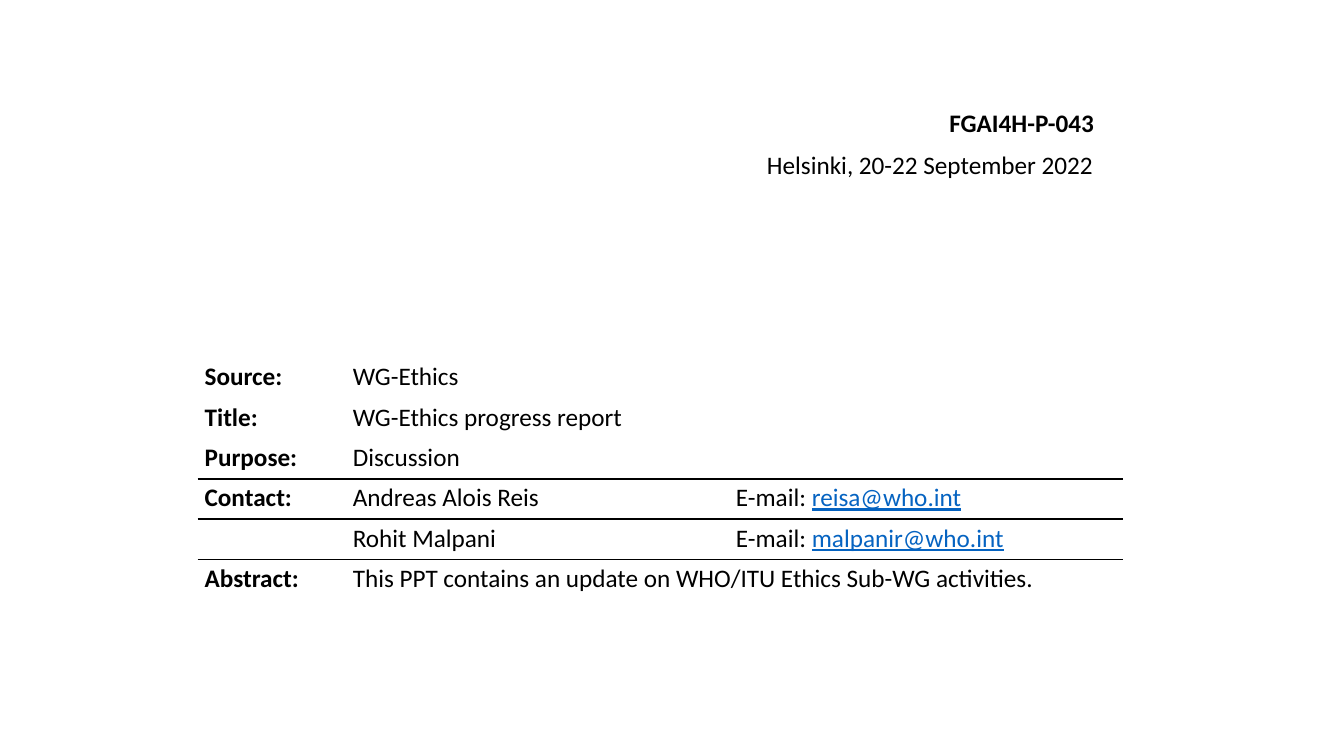
from lxml.etree import SubElement
from pptx import Presentation
from pptx.dml.color import RGBColor
from pptx.enum.text import MSO_AUTO_SIZE, PP_ALIGN
from pptx.oxml.ns import qn
from pptx.util import Pt

PX = 9144  # EMU: 100 px to the inch
BLACK = RGBColor(0x00, 0x00, 0x00)
LINK_BLUE = RGBColor(0x05, 0x63, 0xC1)
FONT = "Calibri"
TEXT_SIZE = Pt(18)
RULE_WIDTH = Pt(1.5)

HEADINGS = [  # text, bold, box
    ("FGAI4H-P-043", True, (929, 102, 166, 40)),
    ("Helsinki, 20-22 September 2022", False, (747, 143, 347, 40)),
]
TABLE_BOX = (196, 355)
COLUMN_WIDTHS = [147, 380, 391]
ROW_HEIGHT = 40
ROWS = [  # label, detail, e-mail address
    ("Source:", "WG-Ethics", None),
    ("Title:", "WG-Ethics progress report", None),
    ("Purpose:", "Discussion", None),
    ("Contact:", "Andreas Alois Reis", "reisa@who.int"),
    ("", "Rohit Malpani", "malpanir@who.int"),
    ("Abstract:", "This PPT contains an update on WHO/ITU Ethics Sub-WG activities.", None),
]
RULED_EDGES = {3, 4, 5}  # row edges, counted from the top of the table


def add_run(paragraph, text, bold=False, color=BLACK, underline=False):
    run = paragraph.add_run()
    run.text = text
    font = run.font
    font.name, font.size = FONT, TEXT_SIZE
    font.bold, font.underline = bold, underline
    font.color.rgb = color


def add_heading(slide, text, bold, box):
    shape = slide.shapes.add_textbox(*(length * PX for length in box))
    frame = shape.text_frame
    frame.word_wrap = False
    frame.auto_size = MSO_AUTO_SIZE.SHAPE_TO_FIT_TEXT
    paragraph = frame.paragraphs[0]
    paragraph.alignment = PP_ALIGN.RIGHT
    add_run(paragraph, text, bold)


def set_border(cell, side, visible):
    line = SubElement(cell._tc.get_or_add_tcPr(), qn(f"a:ln{side}"), w=str(RULE_WIDTH))
    if visible:
        fill = SubElement(line, qn("a:solidFill"))
        SubElement(fill, qn("a:srgbClr"), val=str(BLACK))
    else:
        SubElement(line, qn("a:noFill"))


def format_cell(cell, row_index):
    cell.margin_left = cell.margin_right = 7 * PX
    cell.margin_top = cell.margin_bottom = 4 * PX
    set_border(cell, "L", False)
    set_border(cell, "R", False)
    set_border(cell, "T", row_index in RULED_EDGES)
    set_border(cell, "B", row_index + 1 in RULED_EDGES)
    cell.fill.background()


def add_document_table(slide, left, top):
    table = slide.shapes.add_table(
        len(ROWS), len(COLUMN_WIDTHS), left * PX, top * PX,
        sum(COLUMN_WIDTHS) * PX, len(ROWS) * ROW_HEIGHT * PX).table
    table.first_row = table.horz_banding = False
    for column, width in zip(table.columns, COLUMN_WIDTHS):
        column.width = width * PX

    for row_index, (label, detail, email) in enumerate(ROWS):
        table.rows[row_index].height = ROW_HEIGHT * PX
        cells = [table.cell(row_index, index) for index in range(len(COLUMN_WIDTHS))]
        for cell in cells:
            format_cell(cell, row_index)
        label_text, detail_text, email_text = (
            cell.text_frame.paragraphs[0] for cell in cells)
        if label:
            add_run(label_text, label, bold=True)
        add_run(detail_text, detail)
        if email:
            add_run(email_text, "E-mail: ")
            add_run(email_text, email, color=LINK_BLUE, underline=True)
        else:
            cells[1].merge(cells[2])


def main():
    presentation = Presentation()
    presentation.slide_width = 1333 * PX
    presentation.slide_height = 750 * PX
    slide = presentation.slides.add_slide(presentation.slide_layouts[6])
    for text, bold, box in HEADINGS:
        add_heading(slide, text, bold, box)
    add_document_table(slide, *TABLE_BOX)
    presentation.save("out.pptx")


if __name__ == "__main__":
    main()
